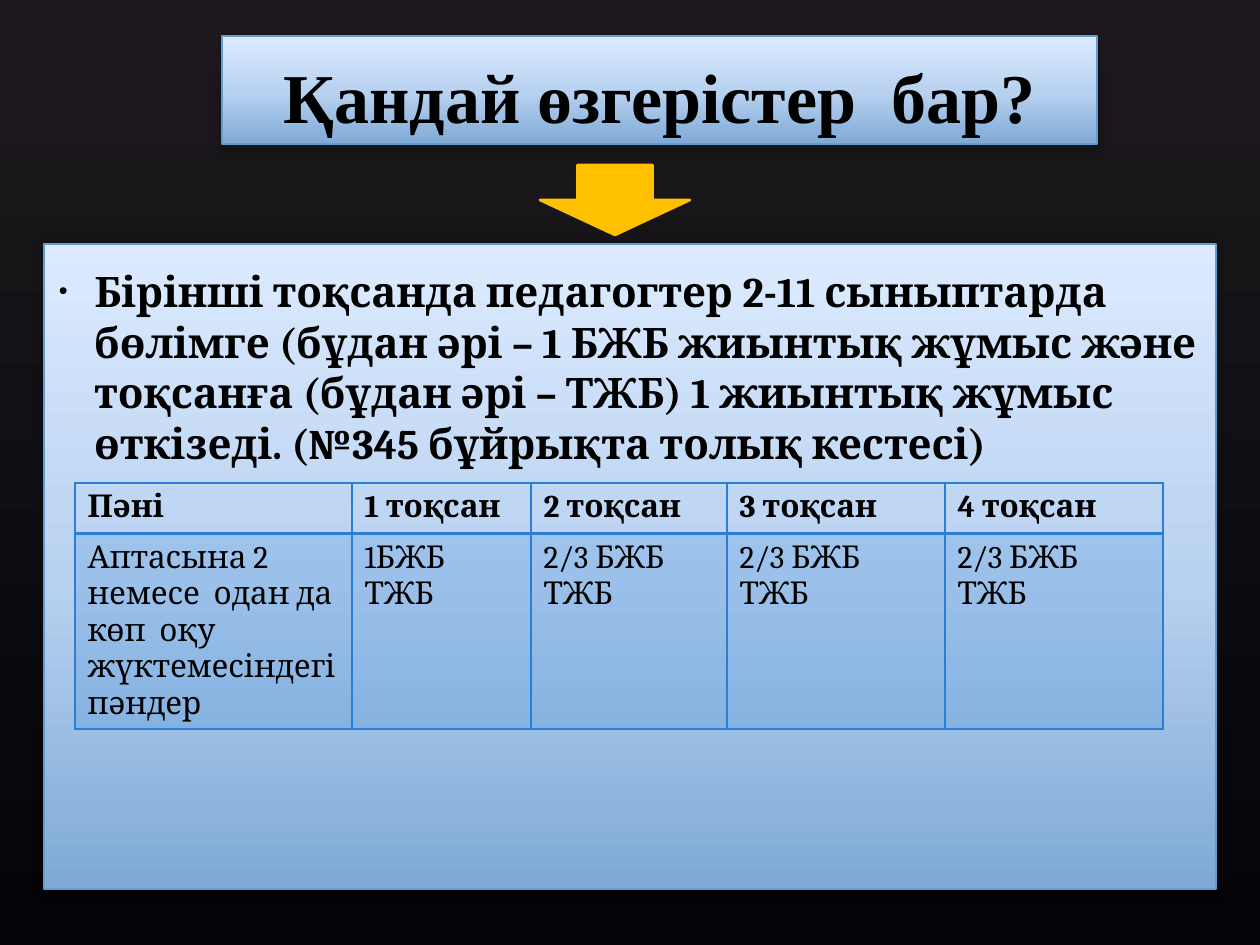
from copy import deepcopy
from dataclasses import dataclass
from typing import Any

from pptx import Presentation
from pptx import util as u
from pptx.dml.color import RGBColor
from pptx.enum import shapes, text
from pptx.oxml import parse_xml
from pptx.oxml.ns import nsdecls, qn

PX = u.Inches(1) // 126
BLACK = RGBColor(0x00, 0x00, 0x00)
NIGHT_TOP = RGBColor(0x1D, 0x19, 0x1E)
NIGHT_BOTTOM = RGBColor(0x04, 0x04, 0x08)
SKY_DARK = RGBColor(0x7F, 0xAA, 0xD6)
SKY_MIDDLE = RGBColor(0xB8, 0xD1, 0xF0)
SKY_LIGHT = RGBColor(0xDC, 0xEB, 0xFF)
PANEL_LINE = RGBColor(0x62, 0x9D, 0xD1)
GRID_BLUE = RGBColor(0x29, 0x7F, 0xD5)
AMBER = RGBColor(0xFF, 0xC0, 0x00)

SKY_STOPS = [(0, SKY_DARK), (0.48, SKY_MIDDLE), (1, SKY_LIGHT)]
BODY_FONT = dict(name="Cambria", size=u.Pt(24), bold=True)
HEADER_FONT = dict(name="Cambria", size=u.Pt(18), bold=True)
CELL_FONT = HEADER_FONT | dict(bold=False)
TITLE_FONT = dict(name="Times New Roman", size=u.Pt(40), bold=True)

COLUMN_WIDTHS = [277, 179, 196, 218, 218]
ROW_HEIGHTS = [51, 195]
LATER_TERM = "2/3 БЖБ\nТЖБ"
ROWS = [
    ["Пәні"] + [f"{term} тоқсан" for term in range(1, 5)],
    ["Аптасына 2 немесе  одан да көп  оқу жүктемесіндегі пәндер",
     "1БЖБ\nТЖБ"] + [LATER_TERM] * 3,
]


@dataclass(frozen=True)
class Box:
    left: int
    top: int
    width: int
    height: int

    def emu(self) -> list[int]:
        return [value * PX for value in (self.left, self.top, self.width, self.height)]


TITLE_BOX = Box(222, 36, 875, 108)
ARROW_BOX = Box(540, 165, 150, 70)
PANEL_BOX = Box(44, 244, 1172, 645)
TABLE_BOX = Box(75, 483, sum(COLUMN_WIDTHS), sum(ROW_HEIGHTS))


def apply(target: Any, values: dict[str, Any]) -> None:
    for name, value in values.items():
        setattr(target, name, value)


def format_text(frame: Any, font: dict[str, Any]) -> None:
    for paragraph in frame.paragraphs:
        apply(paragraph.font, font)
        paragraph.font.color.rgb = BLACK


def fill_gradient(fill: Any, element: Any, angle: int,
                  stops: list[tuple[float, RGBColor]]) -> None:
    """Fill with any number of stops; the angle runs counter-clockwise."""
    fill.gradient()
    fill.gradient_angle = angle
    stop_list = element.find(".//" + qn("a:gsLst"))
    while len(stop_list) < len(stops):
        stop_list.append(deepcopy(stop_list[0]))
    for stop, (position, color) in zip(fill.gradient_stops, stops):
        stop.color.rgb = color
        stop.position = position


def style_sky_box(shape: Any) -> None:
    """Give a box the blue gradient, thin outline and soft shadow."""
    properties = shape._element.spPr
    fill_gradient(shape.fill, properties, 90, SKY_STOPS)
    shape.line.color.rgb = PANEL_LINE
    shape.line.width = u.Pt(1)
    shape.shadow.inherit = False
    properties.find(qn("a:effectLst")).append(parse_xml(
        f'<a:outerShdw {nsdecls("a")} blurRad="{u.Pt(5)}" dist="{u.Pt(1)}" dir="5400000">'
        '<a:srgbClr val="000000"><a:alpha val="32000"/></a:srgbClr></a:outerShdw>'))


def add_title(slide: Any) -> None:
    title = slide.shapes.title
    apply(title, dict(zip(("left", "top", "width", "height"), TITLE_BOX.emu())))
    style_sky_box(title)
    frame = title.text_frame
    frame.text = "Қандай өзгерістер  бар?"
    apply(frame, dict(vertical_anchor=text.MSO_ANCHOR.BOTTOM, word_wrap=True,
                      auto_size=text.MSO_AUTO_SIZE.NONE))
    frame.paragraphs[0].alignment = text.PP_ALIGN.CENTER
    format_text(frame, TITLE_FONT)


def add_panel(slide: Any) -> None:
    panel = slide.shapes.add_shape(shapes.MSO_SHAPE.RECTANGLE, *PANEL_BOX.emu())
    style_sky_box(panel)
    frame = panel.text_frame
    frame.text = ("Бірінші тоқсанда педагогтер 2-11 сыныптарда бөлімге (бұдан әрі – 1 БЖБ "
                  "жиынтық жұмыс және тоқсанға (бұдан әрі – ТЖБ) 1 жиынтық жұмыс  өткізеді. "
                  "(№345 бұйрықта толық кестесі)")
    apply(frame, dict(vertical_anchor=text.MSO_ANCHOR.TOP, word_wrap=True,
                      margin_top=22 * PX))
    paragraph = frame.paragraphs[0]
    paragraph.alignment = text.PP_ALIGN.LEFT
    format_text(frame, BODY_FONT)
    properties = paragraph._p.get_or_add_pPr()
    properties.set("marL", str(u.Inches(0.3)))
    properties.set("indent", str(u.Inches(-0.28)))
    bullet = (f'<a:buSzPct {nsdecls("a")} val="60000"/>',
              f'<a:buFont {nsdecls("a")} typeface="Arial"/>',
              f'<a:buChar {nsdecls("a")} char="•"/>')
    for index, xml in enumerate(bullet):
        properties.insert(index, parse_xml(xml))


def add_arrow(slide: Any) -> None:
    arrow = slide.shapes.add_shape(shapes.MSO_SHAPE.DOWN_ARROW, *ARROW_BOX.emu())
    arrow.shadow.inherit = False
    arrow.fill.solid()
    arrow.fill.fore_color.rgb = AMBER
    arrow.line.color.rgb = AMBER
    arrow.line.width = u.Pt(1.5)


def set_borders(cell: Any, widths: dict[str, float]) -> None:
    properties = cell._tc.get_or_add_tcPr()
    for index, (side, width) in enumerate(widths.items()):
        properties.insert(index, parse_xml(
            f'<a:ln{side} {nsdecls("a")} w="{u.Pt(width)}"><a:solidFill>'
            f'<a:srgbClr val="{GRID_BLUE}"/></a:solidFill></a:ln{side}>'))


def format_cell(cell: Any, content: str, is_header: bool) -> None:
    cell.text = content
    format_text(cell.text_frame, HEADER_FONT if is_header else CELL_FONT)
    if is_header:
        cell.fill.background()
    else:
        cell.fill.solid()
        cell.fill.fore_color.rgb = GRID_BLUE
        color = cell._tc.tcPr.find(".//" + qn("a:srgbClr"))
        color.append(parse_xml(f'<a:alpha {nsdecls("a")} val="20000"/>'))
    set_borders(cell, dict(L=1, R=1, T=1 if is_header else 2, B=2 if is_header else 1))


def add_term_table(slide: Any) -> None:
    table = slide.shapes.add_table(len(ROWS), len(COLUMN_WIDTHS), *TABLE_BOX.emu()).table
    table.horz_banding = False
    for column, width in zip(table.columns, COLUMN_WIDTHS):
        column.width = width * PX
    for row_index, (row, height, contents) in enumerate(zip(table.rows, ROW_HEIGHTS, ROWS)):
        row.height = height * PX
        for cell, content in zip(row.cells, contents):
            format_cell(cell, content, row_index == 0)


def main() -> None:
    presentation = Presentation()
    presentation.slide_width = 1260 * PX
    presentation.slide_height = 945 * PX
    slide = presentation.slides.add_slide(presentation.slide_layouts[5])
    fill_gradient(slide.background.fill, slide._element, 270,
                  [(0, NIGHT_TOP), (1, NIGHT_BOTTOM)])
    add_title(slide)
    add_panel(slide)
    add_arrow(slide)
    add_term_table(slide)
    presentation.save("out.pptx")


if __name__ == "__main__":
    main()
